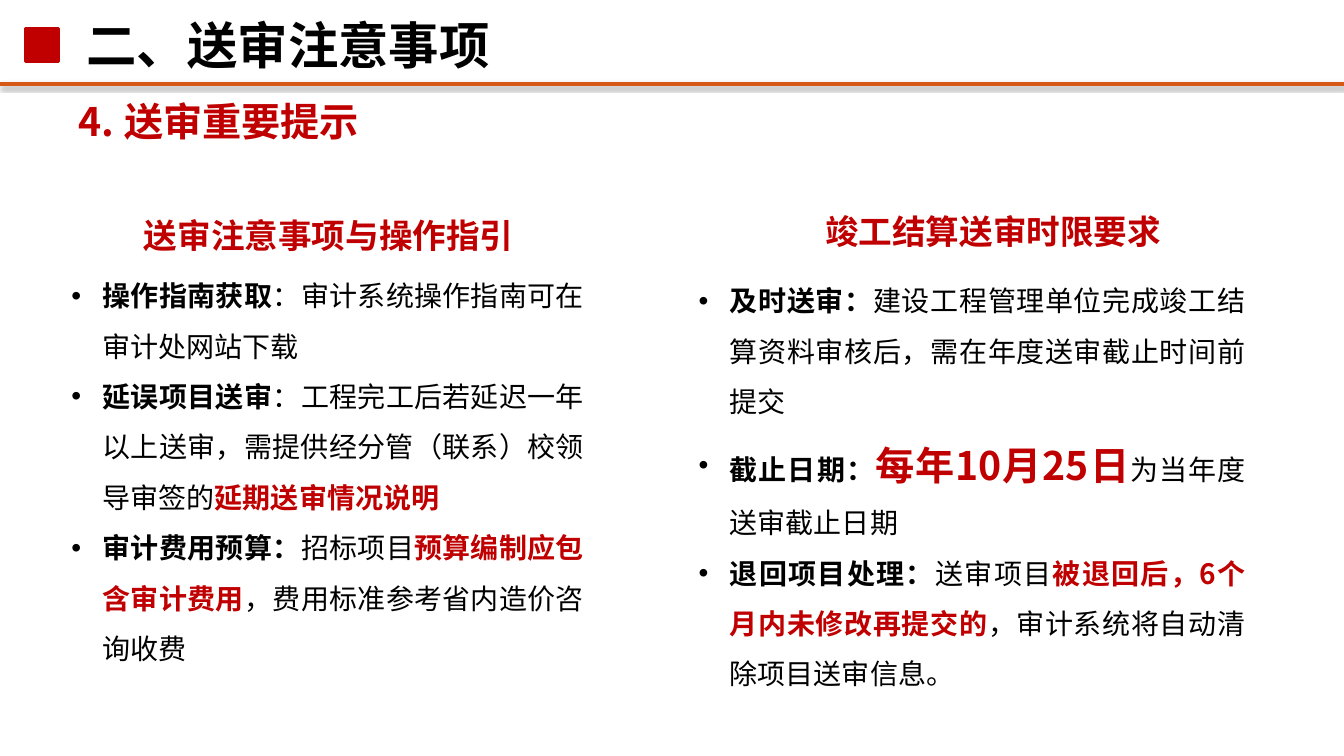
from lxml import etree
from pptx import Presentation
from pptx import util as u
from pptx.dml.color import RGBColor
from pptx.enum import shapes, text
from pptx.oxml import parse_xml
from pptx.oxml.ns import qn

COLORS = {"red": "C00000", "orange": "D55816", "black": "000000", "white": "FFFFFF"}
NS = "http://schemas.openxmlformats.org/drawingml/2006/main"
SANS = "Noto Sans CJK SC"
SERIF = "Times New Roman"


def add_box(left, top, width, height, anchor=text.MSO_ANCHOR.TOP, panel=False):
    place = [u.Inches(length) for length in (left, top, width, height)]
    if panel:
        box = slide.shapes.add_shape(shapes.MSO_SHAPE.RECTANGLE, *place)
        box.shadow.inherit = False
        box.fill.solid()
        box.fill.fore_color.rgb = RGBColor.from_string(COLORS["white"])
        box.line.fill.background()
    else:
        box = slide.shapes.add_textbox(*place)
    box.text_frame.word_wrap = True
    box.text_frame.vertical_anchor = anchor
    return box.text_frame


def add_words(paragraph, words, size, color, bold=True, latin=SANS):
    run = paragraph.add_run()
    run.text = words
    run.font.size = u.Pt(size)
    run.font.bold = bold
    run.font.name = latin
    run.font.color.rgb = RGBColor.from_string(COLORS[color])
    etree.SubElement(run.font._element, qn("a:ea")).set("typeface", SANS)


prs = Presentation()
prs.slide_width = u.Inches(13.33)
prs.slide_height = u.Inches(7.5)
slide = prs.slides.add_slide(prs.slide_layouts[6])

header_rule = slide.shapes.add_connector(
    shapes.MSO_CONNECTOR.STRAIGHT, 0, u.Inches(0.83), u.Inches(13.33), u.Inches(0.83))
header_rule.line.color.rgb = RGBColor.from_string(COLORS["orange"])
header_rule.line.width = u.Pt(3)
header_rule._element.spPr.append(parse_xml(
    f'<a:effectLst xmlns:a="{NS}"><a:outerShdw blurRad="{u.Pt(3.1)}" dist="{u.Pt(1.8)}" '
    f'dir="5400000" rotWithShape="0"><a:srgbClr val="{COLORS["black"]}">'
    '<a:alpha val="35000"/></a:srgbClr></a:outerShdw></a:effectLst>'))

marker = slide.shapes.add_shape(
    shapes.MSO_SHAPE.RECTANGLE, u.Inches(0.25), u.Inches(0.28), u.Inches(0.33), u.Inches(0.33))
marker.shadow.inherit = False
marker.fill.solid()
marker.fill.fore_color.rgb = RGBColor.from_string(COLORS["red"])
marker.line.color.rgb = RGBColor.from_string(COLORS["red"])
marker.line.width = u.Pt(2)

title = add_box(0.76, 0.05, 6.93, 0.78, text.MSO_ANCHOR.MIDDLE)
add_words(title.paragraphs[0], "二、送审注意事项", 36, "black", latin=SERIF)

subtitle = add_box(0.68, 0.92, 10.94, 0.57)
add_words(subtitle.paragraphs[0], "4.", 28, "red")
add_words(subtitle.paragraphs[0], " 送审重要提示", 28, "red", latin=SERIF)

styles = {
    "label": (20, "black", True),
    "plain": (20, "black", False),
    "alert": (20, "red", True),
    "date": (28, "red", True),
}
columns = [
    ("送审注意事项与操作指引", (0.66, 2.08, 5.2, 0.5), (0.61, 2.55, 5.28, 3.17), False, [
        [("操作指南获取", "label"), ("：审计系统操作指南可在审计处网站下载", "plain")],
        [("延误项目送审", "label"),
         ("：工程完工后若延迟一年以上送审，需提供经分管（联系）校领导审签的", "plain"),
         ("延期送审情况说明", "alert")],
        [("审计费用预算：", "label"), ("招标项目", "plain"),
         ("预算编制应包含审计费用", "alert"), ("，费用标准参考省内造价咨询收费", "plain")],
    ]),
    ("竣工结算送审时限要求", (7.18, 2.04, 5.34, 0.59), (6.83, 2.6, 5.62, 4.34), True, [
        [("及时送审：", "label"),
         ("建设工程管理单位完成竣工结算资料审核后，需在年度送审截止时间前提交", "plain")],
        [("截止日期：", "label"), ("每年10月25日", "date"), ("为当年度送审截止日期", "plain")],
        [("退回项目处理：", "label"), ("送审项目", "plain"),
         ("被退回后，6个月内未修改再提交的", "alert"),
         ("，审计系统将自动清除项目送审信息。", "plain")],
    ]),
]

for heading, heading_place, body_place, panel, points in columns:
    heading_line = add_box(*heading_place, panel=panel).paragraphs[0]
    heading_line.alignment = text.PP_ALIGN.CENTER
    add_words(heading_line, heading, 24, "red")

    body = add_box(*body_place, panel=panel)
    for index, point in enumerate(points):
        paragraph = body.add_paragraph() if index else body.paragraphs[0]
        properties = paragraph._p.get_or_add_pPr()
        properties.set("marL", str(u.Inches(0.31)))
        properties.set("indent", str(-u.Inches(0.31)))
        etree.SubElement(properties, qn("a:buFont")).set("typeface", "Arial")
        etree.SubElement(properties, qn("a:buChar")).set("char", "•")
        paragraph.alignment = text.PP_ALIGN.JUSTIFY
        paragraph.line_spacing = 1.5
        for words, style in point:
            add_words(paragraph, words, *styles[style])

prs.save("out.pptx")
